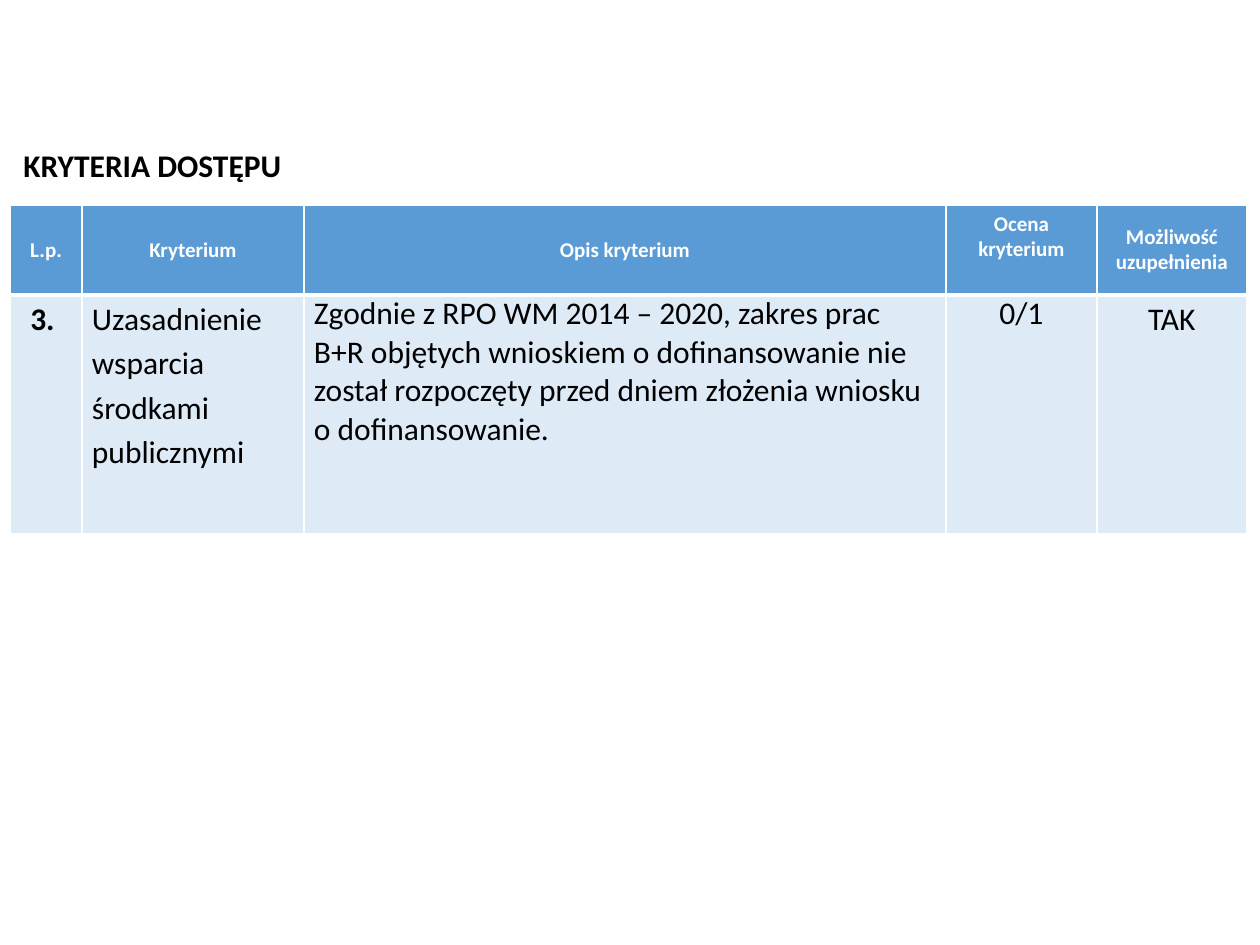
"""Build the access criteria slide: a heading above a one-criterion table."""
from dataclasses import dataclass

from lxml.etree import SubElement
from pptx import Presentation
from pptx.dml.color import RGBColor as RGB
from pptx.enum.text import MSO_ANCHOR as ANCHOR, PP_ALIGN as ALIGN
from pptx.oxml.ns import qn
from pptx.util import Pt

PX = 914400 // 126


@dataclass(frozen=True)
class Theme:
    font: str = "Calibri"
    black: str = "000000"
    white: str = "FFFFFF"
    header_fill: str = "5B9BD5"
    body_fill: str = "DEEBF7"
    header_size: int = 12
    body_size: int = 18
    thin: int = 1
    thick: int = 3


THEME = Theme()
HEADING = "KRYTERIA DOSTĘPU"
HEADING_BOX = (11, 140, 286, 50)
TABLE_AT = (10, 205)
COLUMN_WIDTHS = (72, 222, 642, 151, 150)
ROW_HEIGHTS = (90, 239)
HEADER = [
    ("L.p.", ANCHOR.MIDDLE),
    ("Kryterium", ANCHOR.MIDDLE),
    ("Opis kryterium", ANCHOR.MIDDLE),
    ("Ocena kryterium", ANCHOR.TOP),
    ("Możliwość uzupełnienia", ANCHOR.MIDDLE),
]
CRITERION = [
    ("3. ", ALIGN.CENTER, 1.15, True),
    ("Uzasadnienie wsparcia środkami publicznymi", ALIGN.LEFT, 1.15, False),
    ("Zgodnie z RPO WM 2014 – 2020, zakres prac B+R objętych wnioskiem o "
     "dofinansowanie nie został rozpoczęty przed dniem złożenia wniosku "
     "o dofinansowanie.", ALIGN.LEFT, 1.0, False),
    ("0/1", ALIGN.CENTER, 1.0, False),
    ("TAK", ALIGN.CENTER, 1.15, False),
]


def px(length):
    return length * PX


def write(frame, text, size, color, bold, align=ALIGN.LEFT, spacing=1.0):
    frame.text = text
    paragraph = frame.paragraphs[0]
    paragraph.alignment = align
    paragraph.line_spacing = spacing
    font = paragraph.runs[0].font
    font.name, font.size, font.bold = THEME.font, Pt(size), bold
    font.color.rgb = RGB.from_string(color)


def paint(cell, fill, top, bottom):
    properties = cell._tc.get_or_add_tcPr()
    widths = {"lnL": THEME.thin, "lnR": THEME.thin, "lnT": top, "lnB": bottom}
    for side, width in widths.items():
        line = SubElement(properties, qn(f"a:{side}"), w=str(Pt(width)))
        SubElement(SubElement(line, qn("a:solidFill")), qn("a:srgbClr"), val=THEME.white)
    cell.fill.solid()
    cell.fill.fore_color.rgb = RGB.from_string(fill)


def add_criteria_table(slide):
    size = (sum(COLUMN_WIDTHS), sum(ROW_HEIGHTS))
    table = slide.shapes.add_table(
        len(ROW_HEIGHTS), len(COLUMN_WIDTHS), *map(px, TABLE_AT + size)).table
    table.horz_banding = False
    for column, width in zip(table.columns, COLUMN_WIDTHS):
        column.width = px(width)
    for row, height in zip(table.rows, ROW_HEIGHTS):
        row.height = px(height)

    for index, (label, anchor) in enumerate(HEADER):
        cell = table.cell(0, index)
        write(cell.text_frame, label, THEME.header_size, THEME.white, True, ALIGN.CENTER)
        cell.vertical_anchor = anchor
        paint(cell, THEME.header_fill, THEME.thin, THEME.thick)

    for index, (text, align, spacing, bold) in enumerate(CRITERION):
        cell = table.cell(1, index)
        write(cell.text_frame, text, THEME.body_size, THEME.black, bold, align, spacing)
        cell.vertical_anchor = ANCHOR.TOP
        cell.margin_left = cell.margin_right = px(10)
        cell.margin_top = cell.margin_bottom = 0
        paint(cell, THEME.body_fill, THEME.thick, THEME.thin)


def main():
    deck = Presentation()
    deck.slide_width, deck.slide_height = px(1260), px(945)
    slide = deck.slides.add_slide(deck.slide_layouts[6])
    add_criteria_table(slide)
    heading = slide.shapes.add_textbox(*map(px, HEADING_BOX)).text_frame
    heading.word_wrap = False
    heading.vertical_anchor = ANCHOR.MIDDLE
    write(heading, HEADING, THEME.body_size, THEME.black, True)
    deck.save("out.pptx")


if __name__ == "__main__":
    main()
